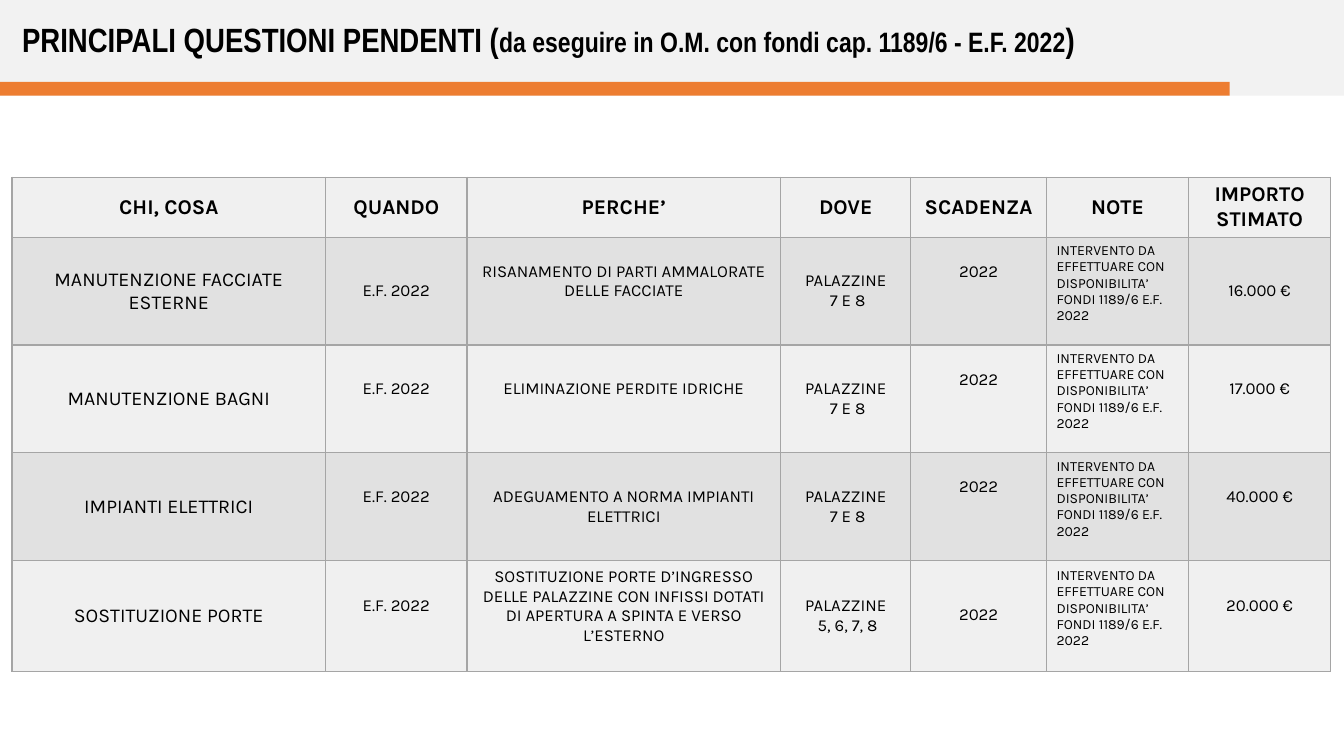
from collections import namedtuple
from dataclasses import dataclass

from lxml.etree import SubElement
from pptx import Presentation
from pptx.dml.color import RGBColor
from pptx.enum.shapes import MSO_SHAPE
from pptx.enum.text import MSO_ANCHOR, MSO_AUTO_SIZE, PP_ALIGN
from pptx.oxml.ns import qn
from pptx.util import Pt

Box = namedtuple("Box", "left top width height")


@dataclass(frozen=True)
class Theme:
    """Colours, fonts and type sizes of the slide."""
    band: str = "F2F2F2"
    accent: str = "ED7D31"
    ink: str = "000000"
    line: str = "A5A5A5"
    light: str = "F0F0F0"
    dark: str = "E1E1E1"
    title_font: str = "Arial Narrow"
    body_font: str = "Karla"
    title: int = 24
    detail: int = 20
    head: int = 15
    task: int = 14
    body: int = 12
    note: int = 10


THEME = Theme()
WIDTHS = (224, 101, 224, 93, 97, 101.5, 101.5)
HEIGHTS = (43, 77, 77, 77, 79.3)
SIZES = (THEME.task,) + (THEME.body,) * 4 + (THEME.note, THEME.body)
HEADS = ("CHI, COSA", "QUANDO", "PERCHE’", "DOVE", "SCADENZA", "NOTE",
         "IMPORTO STIMATO")
YEAR = "E.F. 2022"
DUE, NOTE = 4, 5
PAD = 3.6
NOTE_TEXT = ("INTERVENTO DA EFFETTUARE CON DISPONIBILITA’ "
             "FONDI 1189/6 E.F. 2022")
Task = namedtuple("Task", "what why where cost raised drop")
TASKS = (
    Task("MANUTENZIONE FACCIATE ESTERNE",
         "RISANAMENTO DI PARTI AMMALORATE DELLE FACCIATE",
         "PALAZZINE\n 7 E 8", "16.000 €", (2,), 14),
    Task("MANUTENZIONE BAGNI", "ELIMINAZIONE PERDITE IDRICHE",
         "PALAZZINE\n 7 E 8", "17.000 €", (1, 2, 6), 14),
    Task("IMPIANTI ELETTRICI", "ADEGUAMENTO A NORMA IMPIANTI ELETTRICI",
         "PALAZZINE\n 7 E 8", "40.000 €", (1, 6), 14),
    Task("SOSTITUZIONE PORTE",
         "SOSTITUZIONE PORTE D’INGRESSO DELLE PALAZZINE CON INFISSI DOTATI "
         "DI APERTURA A SPINTA E VERSO L’ESTERNO",
         "PALAZZINE\n 5, 6, 7, 8", "20.000 €", (1, 2, 6), 28),
)


def add_run(para, text, font, size, bold=False):
    """Add one styled run to a paragraph."""
    run = para.add_run()
    run.text = text
    run.font.name = font
    run.font.size = Pt(size)
    run.font.bold = bold
    run.font.color.rgb = RGBColor.from_string(THEME.ink)


def add_band(slide, box, fill):
    """Place a plain bar behind the title."""
    band = slide.shapes.add_shape(MSO_SHAPE.RECTANGLE, *map(Pt, box))
    band.shadow.inherit = False
    band.fill.solid()
    band.fill.fore_color.rgb = RGBColor.from_string(fill)
    band.line.fill.background()
    slide.shapes.title.element.addprevious(band.element)


def add_header(slide, box):
    """Draw the header bars and fill the title."""
    add_band(slide, box, THEME.band)
    add_band(slide, Box(box.left, box.top + box.height - 10, 878.4, 10),
             THEME.accent)
    title = slide.shapes.title
    title.left, title.top = Pt(box.left + 8.6), Pt(box.top + 10)
    title.width, title.height = Pt(862), Pt(36)
    frame = title.text_frame
    frame.word_wrap = True
    frame.auto_size = MSO_AUTO_SIZE.NONE
    frame.vertical_anchor = MSO_ANCHOR.MIDDLE
    para = frame.paragraphs[0]
    para.alignment = PP_ALIGN.LEFT
    for text, size in (
            ("PRINCIPALI QUESTIONI PENDENTI (", THEME.title),
            ("da eseguire in O.M. con fondi cap. 1189/6 - E.F. 2022",
             THEME.detail),
            (")", THEME.title)):
        add_run(para, text, THEME.title_font, size, True)


def add_edges(cell):
    """Give a cell a thin line on all four sides."""
    props = cell._tc.get_or_add_tcPr()
    for tag in ("a:lnL", "a:lnR", "a:lnT", "a:lnB"):
        edge = SubElement(props, qn(tag), w=str(Pt(1)))
        fill = SubElement(edge, qn("a:solidFill"))
        SubElement(fill, qn("a:srgbClr"), val=THEME.line)


def fill_cell(cell, text, size, fill, bold=False, align=PP_ALIGN.CENTER):
    """Write and style one table cell."""
    add_edges(cell)
    cell.fill.solid()
    cell.fill.fore_color.rgb = RGBColor.from_string(fill)
    cell.vertical_anchor = MSO_ANCHOR.MIDDLE
    frame = cell.text_frame
    for i, line in enumerate(text.split("\n")):
        para = frame.add_paragraph() if i else frame.paragraphs[0]
        para.alignment = align
        add_run(para, line, THEME.body_font, size, bold)


def fill_row(cells, task, fill):
    """Write one task across its row."""
    texts = (task.what, YEAR, task.why, task.where, "2022", NOTE_TEXT,
             task.cost)
    for col, (cell, text, size) in enumerate(zip(cells, texts, SIZES)):
        align = PP_ALIGN.LEFT if col == NOTE else PP_ALIGN.CENTER
        fill_cell(cell, text, size, fill, align=align)
        if col in task.raised:
            cell.margin_bottom = Pt(PAD + 14)
    cells[NOTE].margin_bottom = Pt(PAD + 11)
    cells[DUE].vertical_anchor = MSO_ANCHOR.TOP
    cells[DUE].margin_top = Pt(PAD + task.drop)


def add_grid(slide, box):
    """Build the table of pending works."""
    grid = slide.shapes.add_table(len(HEIGHTS), len(WIDTHS),
                                  *map(Pt, box)).table
    for col, width in zip(grid.columns, WIDTHS):
        col.width = Pt(width)
    for row, height in zip(grid.rows, HEIGHTS):
        row.height = Pt(height)
    for cell, text in zip(grid.rows[0].cells, HEADS):
        fill_cell(cell, text, THEME.head, THEME.light, True)
    for i, task in enumerate(TASKS):
        fill = THEME.light if i % 2 else THEME.dark
        fill_row(list(grid.rows[i + 1].cells), task, fill)


def main():
    """Build and save the slide."""
    deck = Presentation()
    deck.slide_width, deck.slide_height = Pt(960), Pt(540)
    slide = deck.slides.add_slide(deck.slide_layouts[5])
    add_header(slide, Box(0, 0, 960, 68.4))
    add_grid(slide, Box(8.6, 126.5, sum(WIDTHS), sum(HEIGHTS)))
    deck.save("out.pptx")


if __name__ == "__main__":
    main()
